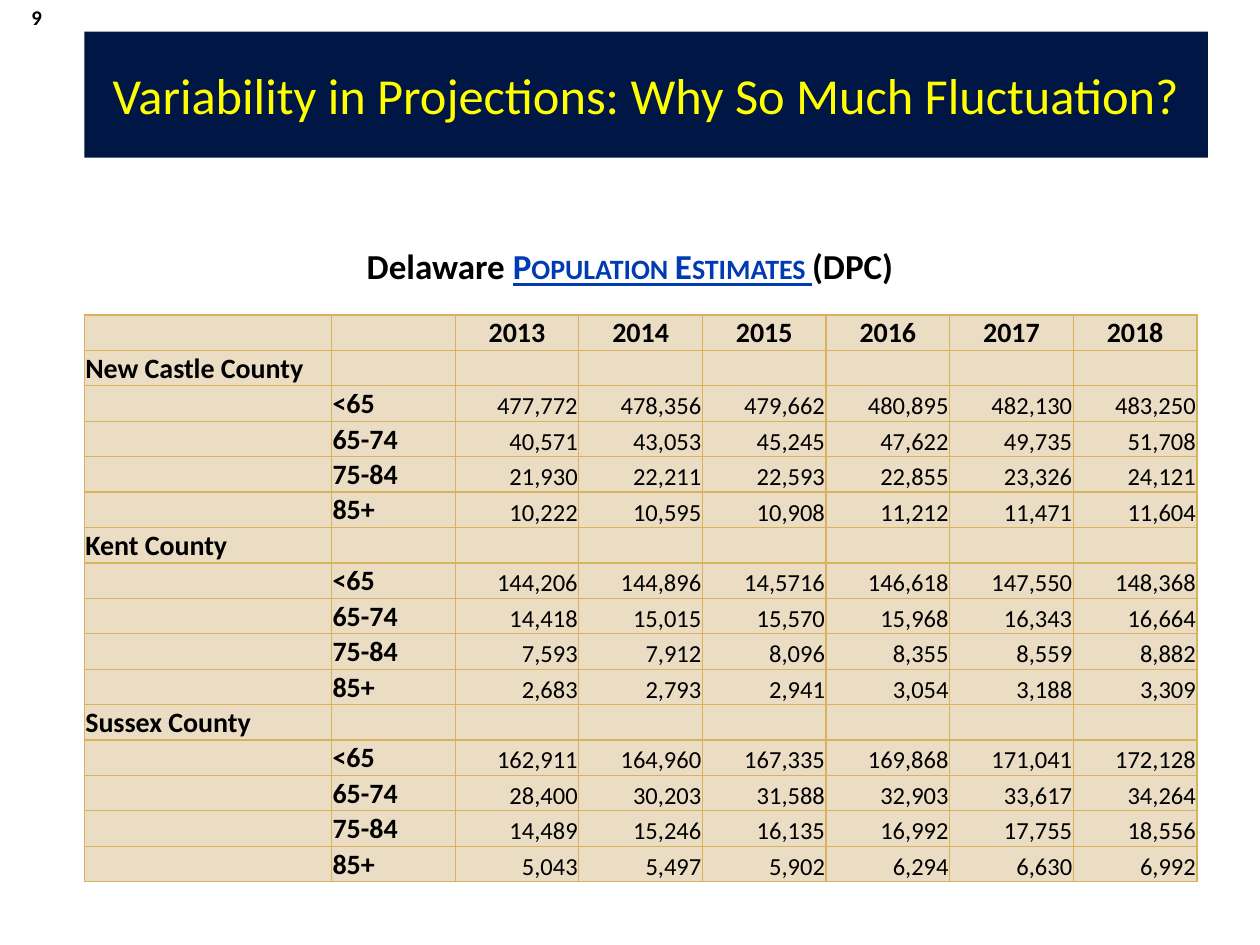
from dataclasses import dataclass

from lxml.etree import SubElement
from pptx import Presentation
from pptx.dml.color import RGBColor
from pptx.enum.shapes import MSO_SHAPE as Shape
from pptx.enum.text import MSO_ANCHOR as Anchor, PP_ALIGN as Align
from pptx.oxml.ns import qn
from pptx.util import Cm, Pt


@dataclass(frozen=True)
class Theme:
    font: str = "Calibri"
    navy: str = "001746"
    yellow: str = "FFFF00"
    black: str = "000000"
    link: str = "003BB4"
    cell: str = "EBDCC4"
    border: str = "D8B25C"
    border_width: float = 0.79
    title_size: float = 28.8
    caption_size: float = 20
    label_size: float = 16
    value_size: float = 14
    number_size: float = 11.9


class SlideBuilder:
    def __init__(self, slide, theme):
        self.slide = slide
        self.theme = theme

    def run(self, paragraph, text, size, color=None, bold=True, small_caps=False):
        run = paragraph.add_run()
        run.text = text
        font = run.font
        font.name = self.theme.font
        font.size = Pt(size)
        font.bold = bold
        font.color.rgb = RGBColor.from_string(color or self.theme.black)
        if small_caps:
            font.underline = True
            font._element.set("cap", "small")

    def centred_paragraph(self, shape):
        frame = shape.text_frame
        frame.word_wrap = True
        frame.vertical_anchor = Anchor.MIDDLE
        paragraph = frame.paragraphs[0]
        paragraph.alignment = Align.CENTER
        return paragraph

    def banner(self, text, *box):
        shape = self.slide.shapes.add_shape(Shape.RECTANGLE, *map(Cm, box))
        shape.shadow.inherit = False
        shape.fill.solid()
        shape.fill.fore_color.rgb = RGBColor.from_string(self.theme.navy)
        shape.line.fill.background()
        self.run(self.centred_paragraph(shape), text, self.theme.title_size,
                 self.theme.yellow, bold=False)

    def text(self, runs, size, *box):
        paragraph = self.centred_paragraph(
            self.slide.shapes.add_textbox(*map(Cm, box)))
        for text, options in runs:
            self.run(paragraph, text, size, **options)

    def borders(self, cell):
        properties = cell._tc.get_or_add_tcPr()
        for side in ("a:lnL", "a:lnR", "a:lnT", "a:lnB"):
            line = SubElement(properties, qn(side),
                              w=str(int(Pt(self.theme.border_width))))
            fill = SubElement(line, qn("a:solidFill"))
            SubElement(fill, qn("a:srgbClr"), val=self.theme.border)

    def cell(self, cell, text, align, size, bold):
        self.borders(cell)
        cell.fill.solid()
        cell.fill.fore_color.rgb = RGBColor.from_string(self.theme.cell)
        cell.margin_left = cell.margin_right = cell.margin_top = Cm(0.02)
        cell.margin_bottom = 0
        cell.vertical_anchor = Anchor.BOTTOM
        paragraph = cell.text_frame.paragraphs[0]
        paragraph.alignment = align
        if text:
            self.run(paragraph, text, size, bold=bold)
        else:
            # Keep empty cells from stretching their row
            SubElement(paragraph._p, qn("a:endParaRPr"), sz=str(size * 100))

    def table(self, rows, left, top, width, height):
        column_count = len(rows[0])
        frame = self.slide.shapes.add_table(
            len(rows), column_count, *map(Cm, (left, top, width, height)))
        table = frame.table
        # The county column is twice as wide as the others
        for index, column in enumerate(table.columns):
            column.width = Cm(width / (column_count + 1) * (1 if index else 2))
        for row in table.rows:
            row.height = Cm(height / len(rows))
        theme = self.theme
        for row_index, row in enumerate(rows):
            for column_index, text in enumerate(row):
                if column_index < 2:
                    style = Align.LEFT, theme.label_size, True
                elif row_index == 0:
                    style = Align.CENTER, theme.label_size, True
                else:
                    style = Align.RIGHT, theme.value_size, False
                self.cell(table.cell(row_index, column_index), text, *style)


YEARS = ["2013", "2014", "2015", "2016", "2017", "2018"]
AGES = ["<65", "65-74", "75-84", "85+"]
COUNTIES = {
    "New Castle County": [
        "477,772 478,356 479,662 480,895 482,130 483,250",
        "40,571 43,053 45,245 47,622 49,735 51,708",
        "21,930 22,211 22,593 22,855 23,326 24,121",
        "10,222 10,595 10,908 11,212 11,471 11,604",
    ],
    "Kent County": [
        "144,206 144,896 14,5716 146,618 147,550 148,368",
        "14,418 15,015 15,570 15,968 16,343 16,664",
        "7,593 7,912 8,096 8,355 8,559 8,882",
        "2,683 2,793 2,941 3,054 3,188 3,309",
    ],
    "Sussex County": [
        "162,911 164,960 167,335 169,868 171,041 172,128",
        "28,400 30,203 31,588 32,903 33,617 34,264",
        "14,489 15,246 16,135 16,992 17,755 18,556",
        "5,043 5,497 5,902 6,294 6,630 6,992",
    ],
}


def population_rows():
    rows = [["", "", *YEARS]]
    for county, age_values in COUNTIES.items():
        rows.append([county, *[""] * (len(YEARS) + 1)])
        rows += [["", age, *values.split()]
                 for age, values in zip(AGES, age_values)]
    return rows


def main():
    presentation = Presentation()
    presentation.slide_width, presentation.slide_height = Cm(25.4), Cm(19.05)
    theme = Theme()
    slide = presentation.slides.add_slide(presentation.slide_layouts[6])
    builder = SlideBuilder(slide, theme)

    # Title banner
    builder.banner("Variability in Projections: Why So Much Fluctuation?",
                   1.7, 0.64, 22.65, 2.54)

    # Population table
    builder.table(population_rows(), 1.7, 6.35, 22.43, 11.43)

    # Table caption
    builder.text([("Delaware ", {}),
                  ("Population Estimates ",
                   {"color": theme.link, "small_caps": True}),
                  ("(DPC)", {})],
                 theme.caption_size, 1.27, 4.37, 22.86, 1.98)

    # Page number
    builder.text([("9", {})], theme.number_size, 0, 0, 1.48, 0.69)

    presentation.save("out.pptx")


if __name__ == "__main__":
    main()
